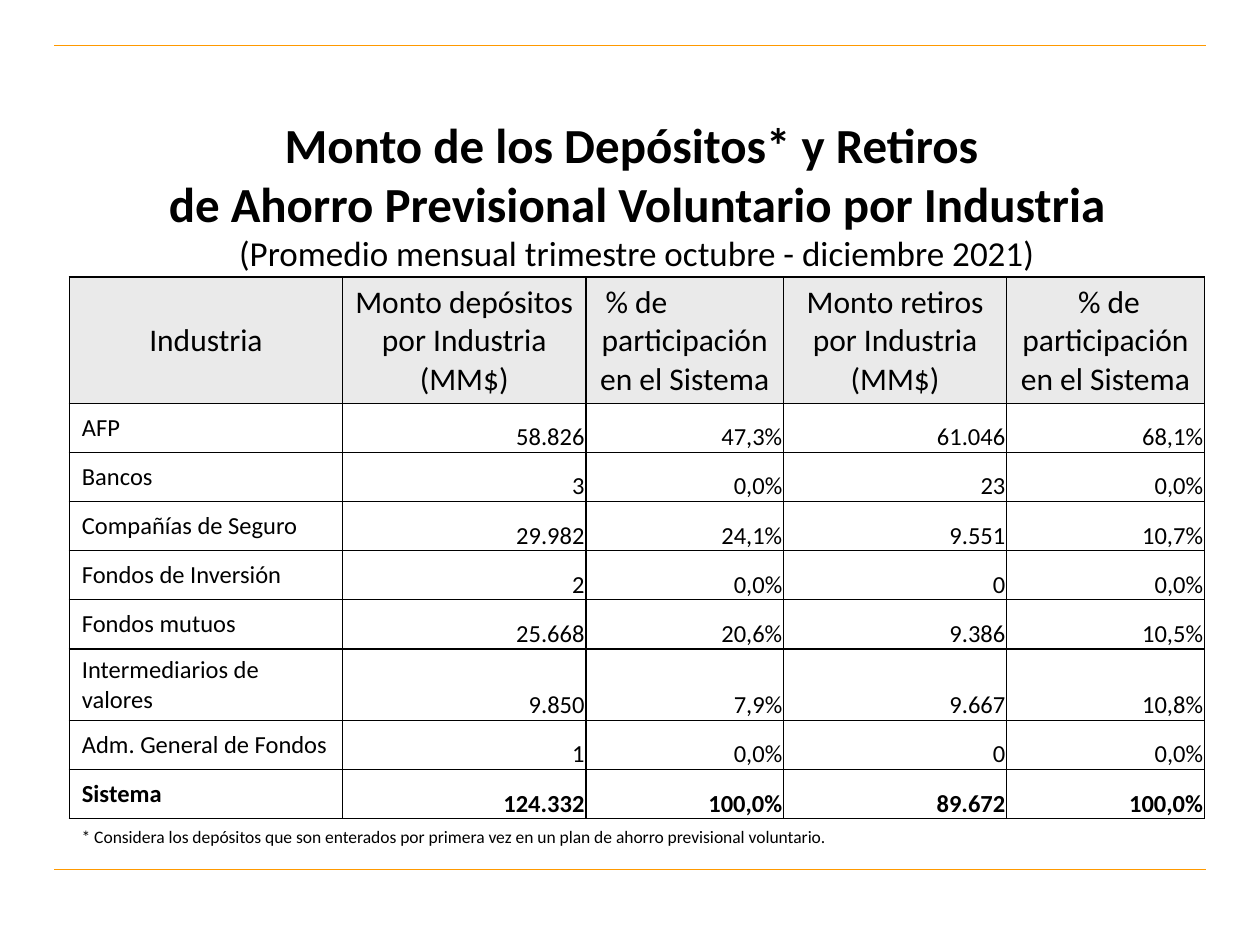
from dataclasses import dataclass
from typing import Any

from lxml import etree
from pptx import Presentation
from pptx.dml.color import RGBColor
from pptx.enum.shapes import MSO_CONNECTOR
from pptx.enum.text import MSO_ANCHOR, PP_ALIGN
from pptx.oxml.ns import qn
from pptx.util import Inches, Pt

LEFT, CENTER, RIGHT = PP_ALIGN.LEFT, PP_ALIGN.CENTER, PP_ALIGN.RIGHT
MIDDLE, BOTTOM, TOP = MSO_ANCHOR.MIDDLE, MSO_ANCHOR.BOTTOM, MSO_ANCHOR.TOP
STRAIGHT = MSO_CONNECTOR.STRAIGHT


@dataclass(frozen=True)
class Theme:
    font: str = "Calibri"
    ink: str = "000000"
    rule: str = "FF9900"
    header_fill: str = "EAEAEA"
    body_fill: str = "FFFFFF"
    title: int = 28
    subtitle: int = 20
    header: int = 18
    body: int = 14
    note: int = 10
    rule_width: float = 0.75
    border_width: int = 1


@dataclass(frozen=True)
class Line:
    text: str
    size: int
    bold: bool = False
    align: Any = LEFT


@dataclass(frozen=True)
class CellStyle:
    anchor: Any
    margins: tuple[float, float, float, float]
    fill: str | None


@dataclass(frozen=True)
class Industry:
    name: str
    figures: tuple[str, str, str, str]
    bold: bool = False


THEME = Theme()
ROOMY = (0.1, 0.05, 0.1, 0.05)
TIGHT = (0.01, 0.01, 0.01, 0)
HEADER = CellStyle(MIDDLE, ROOMY, THEME.header_fill)
NAME = CellStyle(MIDDLE, ROOMY, THEME.body_fill)
AMOUNT = CellStyle(BOTTOM, TIGHT, THEME.body_fill)
SHARE = CellStyle(BOTTOM, TIGHT, None)

COLUMN_WIDTHS = (2.17, 1.93, 1.57, 1.77, 1.57)
HEADER_HEIGHT, ROW_HEIGHT = 0.92, 0.39
RULE_TOPS = (0.36, 6.9)

HEADINGS = (
    (("Industria", CENTER),),
    (("Monto depósitos por Industria (MM$)", CENTER),),
    ((" % de", LEFT), ("participación en el Sistema", CENTER)),
    (("Monto retiros", CENTER), ("por Industria (MM$)", CENTER)),
    ((" % de", CENTER), ("participación en el Sistema", CENTER)),
)
INDUSTRIES = (
    Industry("AFP", ("58.826", "47,3%", "61.046", "68,1%")),
    Industry("Bancos", ("3", "0,0%", "23", "0,0%")),
    Industry("Compañías de Seguro", ("29.982", "24,1%", "9.551", "10,7%")),
    Industry("Fondos de Inversión", ("2", "0,0%", "0", "0,0%")),
    Industry("Fondos mutuos", ("25.668", "20,6%", "9.386", "10,5%")),
    Industry("Intermediarios de valores", ("9.850", "7,9%", "9.667", "10,8%")),
    Industry("Adm. General de Fondos", ("1", "0,0%", "0", "0,0%")),
    Industry("Sistema", ("124.332", "100,0%", "89.672", "100,0%"), bold=True),
)
TITLE = (
    Line("Monto de los Depósitos* y Retiros ", THEME.title, True, CENTER),
    Line("de Ahorro Previsional Voluntario por Industria", THEME.title, True, CENTER),
    Line("(Promedio mensual trimestre octubre - diciembre 2021)", THEME.subtitle, False, CENTER),
)
NOTE = (
    Line("* Considera los depósitos que son enterados por primera vez "
         "en un plan de ahorro previsional voluntario.", THEME.note),
)


def apply(target: Any, values: dict[str, Any]) -> None:
    for attribute, value in values.items():
        setattr(target, attribute, value)


def write(frame: Any, lines: tuple[Line, ...]) -> None:
    for index, line in enumerate(lines):
        paragraph = frame.add_paragraph() if index else frame.paragraphs[0]
        paragraph.alignment = line.align
        run = paragraph.add_run()
        run.text = line.text
        apply(run.font, {"name": THEME.font, "size": Pt(line.size), "bold": line.bold})
        run.font.color.rgb = RGBColor.from_string(THEME.ink)


def add_text(slide: Any, box: tuple[float, ...], lines: tuple[Line, ...], anchor: Any) -> None:
    frame = slide.shapes.add_textbox(*map(Inches, box)).text_frame
    apply(frame, {"word_wrap": True, "vertical_anchor": anchor})
    write(frame, lines)


def add_rule(slide: Any, top: float) -> None:
    rule = slide.shapes.add_connector(
        STRAIGHT, Inches(0.43), Inches(top), Inches(9.57), Inches(top))
    rule.line.color.rgb = RGBColor.from_string(THEME.rule)
    rule.line.width = Pt(THEME.rule_width)
    etree.SubElement(rule._element.spPr, qn("a:effectLst"))


def add_borders(cell: Any) -> None:
    properties = cell._tc.get_or_add_tcPr()
    for side in ("a:lnL", "a:lnR", "a:lnT", "a:lnB"):
        border = etree.SubElement(properties, qn(side), w=str(Pt(THEME.border_width)))
        solid = etree.SubElement(border, qn("a:solidFill"))
        etree.SubElement(solid, qn("a:srgbClr"), val=THEME.ink)


def fill_cell(cell: Any, lines: tuple[Line, ...], style: CellStyle) -> None:
    sides = ("margin_left", "margin_top", "margin_right", "margin_bottom")
    apply(cell, dict(zip(sides, map(Inches, style.margins))))
    cell.vertical_anchor = style.anchor
    add_borders(cell)
    if style.fill:
        cell.fill.solid()
        cell.fill.fore_color.rgb = RGBColor.from_string(style.fill)
    else:
        cell.fill.background()
    write(cell.text_frame, lines)


def add_savings_table(slide: Any) -> None:
    heights = (HEADER_HEIGHT,) + (ROW_HEIGHT,) * len(INDUSTRIES)
    table = slide.shapes.add_table(
        len(heights), len(COLUMN_WIDTHS), Inches(0.55), Inches(2.2),
        Inches(sum(COLUMN_WIDTHS)), Inches(sum(heights))).table
    apply(table, {"first_row": False, "horz_banding": False})
    for column, width in zip(table.columns, COLUMN_WIDTHS):
        column.width = Inches(width)
    for row, height in zip(table.rows, heights):
        row.height = Inches(height)
    for column, heading in enumerate(HEADINGS):
        lines = tuple(Line(text, THEME.header, align=align) for text, align in heading)
        fill_cell(table.cell(0, column), lines, HEADER)
    for row, industry in enumerate(INDUSTRIES, 1):
        name = Line(industry.name, THEME.body, industry.bold)
        fill_cell(table.cell(row, 0), (name,), NAME)
        for column, text in enumerate(industry.figures, 1):
            figure = Line(text, THEME.body, industry.bold, RIGHT)
            fill_cell(table.cell(row, column), (figure,), AMOUNT if column % 2 else SHARE)


def main() -> None:
    presentation = Presentation()
    apply(presentation, {"slide_width": Inches(10), "slide_height": Inches(7.5)})
    slide = presentation.slides.add_slide(presentation.slide_layouts[6])
    for top in RULE_TOPS:
        add_rule(slide, top)
    add_text(slide, (0.41, 0.99, 9.29, 1.1), TITLE, MIDDLE)
    add_savings_table(slide)
    add_text(slide, (0.55, 6.51, 6.2, 0.44), NOTE, TOP)
    presentation.save("out.pptx")


if __name__ == "__main__":
    main()
